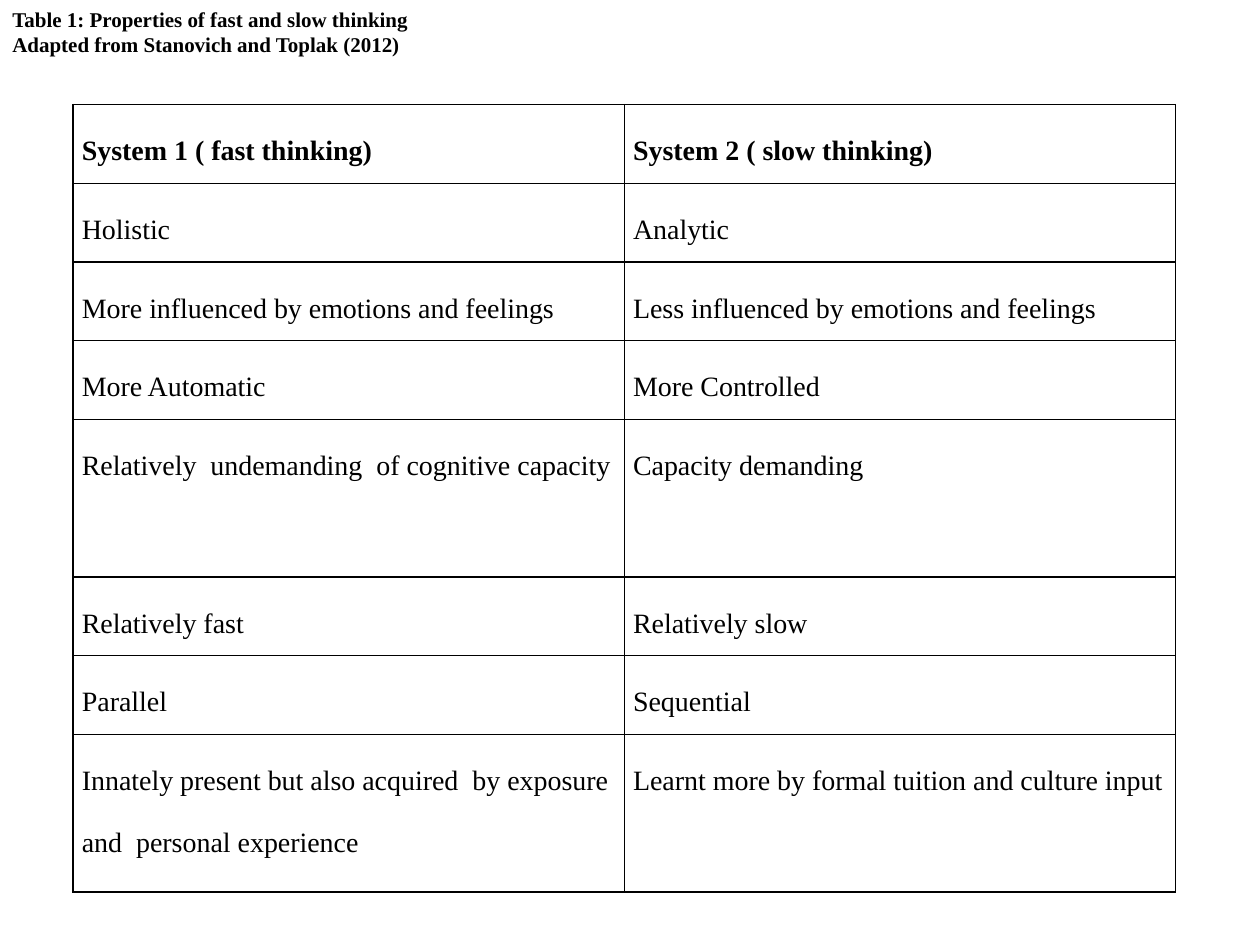
from lxml import etree
from pptx import Presentation
from pptx import util as u
from pptx.dml.color import RGBColor
from pptx.enum import text
from pptx.oxml import ns

BLACK = RGBColor(0x00, 0x00, 0x00)
WHITE = RGBColor(0xFF, 0xFF, 0xFF)

CAPTION = [
    "Table 1: Properties of fast and slow thinking",
    "Adapted from Stanovich and Toplak (2012)",
]
PROPERTIES = [
    ("System 1 ( fast thinking)", "System 2 ( slow thinking)", 1),
    ("Holistic", "Analytic", 1),
    ("More influenced by emotions and feelings",
     "Less influenced by emotions and feelings", 1),
    ("More Automatic", "More Controlled", 1),
    ("Relatively  undemanding  of cognitive capacity", "Capacity demanding", 2),
    ("Relatively fast", "Relatively slow", 1),
    ("Parallel", "Sequential", 1),
    ("Innately present but also acquired  by exposure and  personal experience",
     "Learnt more by formal tuition and culture input", 2),
]


class SlideWriter:
    font = "Times New Roman"
    caption_size = u.Pt(12)
    cell_size = u.Pt(16)
    border = u.Pt(1)

    def __init__(self, slide):
        self.slide = slide

    def add_run(self, paragraph, wording, size, bold):
        run = paragraph.add_run()
        run.text = wording
        run.font.name = self.font
        run.font.size = size
        run.font.bold = bold
        run.font.color.rgb = BLACK

    def add_caption(self, lines, left, top, width, height):
        caption = self.slide.shapes.add_textbox(left, top, width, height)
        frame = caption.text_frame
        frame.word_wrap = True
        frame.auto_size = text.MSO_AUTO_SIZE.SHAPE_TO_FIT_TEXT
        frame.vertical_anchor = text.MSO_ANCHOR.MIDDLE
        for index, line in enumerate(lines):
            paragraph = frame.add_paragraph() if index else frame.paragraphs[0]
            self.add_run(paragraph, line, self.caption_size, True)

    def add_borders(self, cell):
        properties = cell._tc.get_or_add_tcPr()
        for position, side in enumerate(("lnL", "lnR", "lnT", "lnB")):
            line = etree.Element(ns.qn(f"a:{side}"), w=str(self.border))
            fill = etree.SubElement(line, ns.qn("a:solidFill"))
            etree.SubElement(fill, ns.qn("a:srgbClr"), val=str(BLACK))
            properties.insert(position, line)

    def fill_cell(self, cell, wording, bold):
        cell.margin_left = cell.margin_right = u.Inches(0.07)
        cell.margin_top = cell.margin_bottom = 0
        cell.fill.solid()
        cell.fill.fore_color.rgb = WHITE
        self.add_borders(cell)
        paragraph = cell.text_frame.paragraphs[0]
        paragraph.line_spacing = 2.0
        self.add_run(paragraph, wording, self.cell_size, bold)

    def add_comparison(self, rows, left, top, width, height):
        table = self.slide.shapes.add_table(
            len(rows), 2, left, top, width, height).table
        line_height = height // sum(lines for *_, lines in rows)
        for row_index, (*wordings, lines) in enumerate(rows):
            table.rows[row_index].height = line_height * lines
            for column, wording in enumerate(wordings):
                self.fill_cell(table.cell(row_index, column), wording, row_index == 0)


def main():
    deck = Presentation()
    deck.slide_width = u.Inches(10)
    deck.slide_height = u.Inches(7.5)
    writer = SlideWriter(deck.slides.add_slide(deck.slide_layouts[6]))
    writer.add_comparison(PROPERTIES, u.Inches(0.58), u.Inches(0.83),
                          u.Inches(8.75), u.Inches(6.25))
    writer.add_caption(CAPTION, 0, 0, u.Inches(10), u.Inches(0.5))
    deck.save("out.pptx")


if __name__ == "__main__":
    main()
